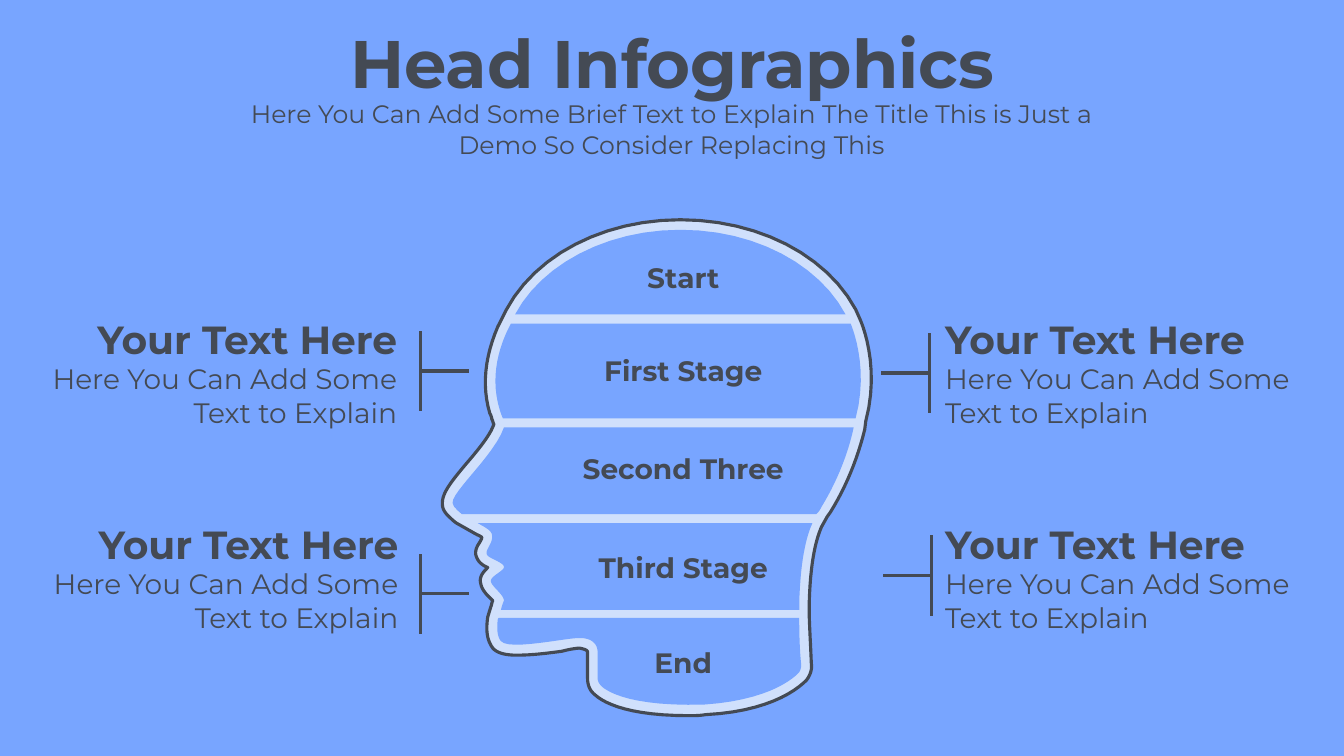
from lxml import etree
from pptx import Presentation
from pptx.dml.color import RGBColor
from pptx.enum.shapes import MSO_CONNECTOR
from pptx.enum.text import MSO_ANCHOR, MSO_AUTO_SIZE, PP_ALIGN
from pptx.oxml.ns import qn
from pptx.util import Cm, Pt

STRAIGHT = MSO_CONNECTOR.STRAIGHT
TOP = MSO_ANCHOR.TOP
NO_AUTOFIT = MSO_AUTO_SIZE.NONE
LEFT, CENTER, RIGHT = PP_ALIGN.LEFT, PP_ALIGN.CENTER, PP_ALIGN.RIGHT

COLORS = {"back": "78A5FF", "ink": "444A54", "pale": "D0E0FC"}
FONT = "Montserrat"
LINE_WIDTH = 2.25
CURVE_STEPS = 12
FINE = 100
OUTLINE_UNIT = Cm(2.54) / 100

# Outlines: a start point, then line ends (2 numbers) or Bezier curves (6).
HEAD = [
    (684, 710), (627, 710, 601, 699, 590, 689), (585, 685, 583, 679, 583, 673),
    (583, 647), (583, 645, 580, 644, 575, 643), (573, 643, 565, 644, 558, 646),
    (544, 648, 527, 650, 513, 650), (505, 650, 494, 649, 489, 643),
    (483, 635, 482, 625, 484, 612), (487, 602), (488, 600, 488, 597, 489, 596),
    (488, 595, 486, 593, 485, 592), (481, 588, 478, 584, 477, 579),
    (475, 572, 480, 567, 484, 563), (479, 561, 475, 558, 473, 553),
    (470, 547, 474, 541, 476, 538), (477, 536, 478, 535, 478, 533),
    (477, 532, 474, 531, 469, 528), (453, 519), (450, 517, 447, 514, 444, 511),
    (441, 508, 439, 504, 439, 501), (438, 491, 445, 481, 461, 462),
    (472, 449, 486, 433, 490, 421), (489, 419, 489, 417, 488, 416),
    (488, 414, 487, 412, 486, 410), (478, 383, 481, 354, 494, 324),
    (498, 316), (502, 308), (531, 253, 599, 218, 675, 218),
    (752, 218, 820, 253, 849, 307), (853, 316), (854, 318, 874, 362, 859, 418),
    (858, 426), (851, 455, 839, 484, 824, 508), (822, 511, 821, 512, 820, 514),
    (815, 523), (808, 539, 804, 564, 803, 596), (803, 613),
    (804, 637, 805, 655, 805, 658), (806, 664, 804, 670, 800, 675),
    (788, 687, 759, 706, 700, 709), (694, 710, 689, 710, 684, 710),
]
STAGES = [
    ("Start", 6.45, [
        (839, 312), (511, 312), (537, 263, 601, 228, 675, 228),
        (750, 228, 813, 263, 839, 312)]),
    ("First Stage", 8.79, [
        (849, 415), (499, 415), (498, 413, 497, 410, 496, 407),
        (487, 378, 493, 351, 503, 329), (507, 321), (844, 321),
        (844, 321, 863, 363, 849, 415)]),
    ("Second Three", 11.25, [
        (847, 424), (841, 453, 828, 482, 815, 503),
        (814, 505, 813, 507, 811, 509), (810, 510), (458, 510),
        (456, 508, 453, 506, 452, 504), (450, 503, 450, 501, 449, 499),
        (448, 488, 491, 451, 500, 424)]),
    ("Third Stage", 13.74, [
        (806, 519), (797, 539, 794, 568, 793, 596), (793, 605), (497, 605),
        (498, 601, 499, 598, 500, 596), (500, 590, 488, 582, 487, 577),
        (486, 572, 499, 567, 500, 563), (501, 558, 484, 554, 483, 550),
        (481, 545, 490, 539, 488, 530), (487, 526, 481, 523, 474, 519)]),
    ("End", 16.15, [
        (495, 613), (793, 613), (793, 634, 794, 652, 795, 659),
        (795, 663, 794, 666, 792, 668), (783, 677, 757, 695, 699, 699),
        (630, 701, 605, 688, 597, 681), (595, 679, 593, 676, 593, 673),
        (593, 647), (593, 638, 586, 633, 576, 633),
        (565, 632, 505, 646, 497, 636), (493, 631, 493, 622, 494, 614)]),
]
CALLOUTS = [
    (0.43, 7.82, RIGHT, 10.59, 11.81, 9.35),
    (23.57, 7.82, LEFT, 23.42, 22.2, 9.4),
    (0.46, 12.98, RIGHT, 10.59, 11.81, 14.96),
    (23.57, 12.98, LEFT, 23.47, 22.25, 14.5),
]
ARM = 1.01


def color(name):
    return RGBColor.from_string(COLORS[name])


def flatten(outline):
    points = [outline[0]]
    for x1, y1, *rest in outline[1:]:
        if not rest:
            points.append((x1, y1))
            continue
        x0, y0 = points[-1]
        x2, y2, x3, y3 = rest
        for step in range(1, CURVE_STEPS + 1):
            t = step / CURVE_STEPS
            u = 1 - t
            a, b, c, d = u ** 3, 3 * u * u * t, 3 * u * t * t, t ** 3
            points.append((a * x0 + b * x1 + c * x2 + d * x3,
                           a * y0 + b * y1 + c * y2 + d * y3))
    return [(x * FINE, y * FINE) for x, y in points]


def write(sp, text, size=20, bold=False, align=CENTER):
    tf = sp.text_frame
    tf.word_wrap = True
    tf.auto_size = NO_AUTOFIT
    tf.vertical_anchor = TOP
    p = tf.paragraphs[0]
    p.alignment = align
    r = p.add_run()
    r.text = text
    r.font.name = FONT
    r.font.size = Pt(size)
    r.font.bold = bold
    r.font.color.rgb = color("ink")


class Deck:
    def __init__(self):
        self.prs = Presentation()
        self.prs.slide_width = Cm(33.87)
        self.prs.slide_height = Cm(19.05)
        self.s = self.prs.slides.add_slide(self.prs.slide_layouts[5])
        fill = self.s.background.fill
        fill.solid()
        fill.fore_color.rgb = color("back")

    def title(self, text, x, y, w, h, **fmt):
        sp = self.s.shapes.title
        sp.left, sp.top, sp.width, sp.height = Cm(x), Cm(y), Cm(w), Cm(h)
        write(sp, text, **fmt)

    def text(self, text, x, y, w, h, **fmt):
        sp = self.s.shapes.add_textbox(Cm(x), Cm(y), Cm(w), Cm(h))
        write(sp, text, **fmt)

    def outline(self, outline, fill, line=None):
        start, *points = flatten(outline)
        builder = self.s.shapes.build_freeform(*start, scale=OUTLINE_UNIT / FINE)
        builder.add_line_segments(points, close=True)
        sp = builder.convert_to_shape()
        sp.shadow.inherit = False
        sp.fill.solid()
        sp.fill.fore_color.rgb = color(fill)
        if line:
            sp.line.color.rgb = color(line)
            sp.line.width = Pt(LINE_WIDTH)
        else:
            sp.line.fill.background()

    def line(self, x1, y1, x2, y2):
        cx = self.s.shapes.add_connector(STRAIGHT, Cm(x1), Cm(y1), Cm(x2), Cm(y2))
        cx.line.color.rgb = color("ink")
        cx.line.width = Pt(LINE_WIDTH)
        etree.SubElement(cx._element.spPr, qn("a:effectLst"))

    def callout(self, x, y, align, spine, tip, mid):
        self.text("Your Text Here", x, y, 9.83, 1.45, size=28, bold=True, align=align)
        self.text("Here You Can Add Some Text to Explain", x, y + 1.17, 9.83, 1.96,
                  align=align)
        for end in ((tip, mid), (spine, mid - ARM), (spine, mid + ARM)):
            self.line(spine, mid, *end)


def main():
    deck = Deck()
    deck.title("Head Infographics", 7.06, 0.41, 19.76, 2.31, size=48, bold=True)
    deck.text("Here You Can Add Some Brief Text to Explain The Title This is Just a "
              "Demo So Consider Replacing This", 5.84, 2.36, 22.17, 1.8, size=18)
    deck.outline(HEAD, "pale", line="ink")
    for label, y, band in STAGES:
        deck.outline(band, "back")
        deck.text(label, 14.35, y, 5.74, 1.12, bold=True)
    for callout in CALLOUTS:
        deck.callout(*callout)
    deck.prs.save("out.pptx")


if __name__ == "__main__":
    main()
